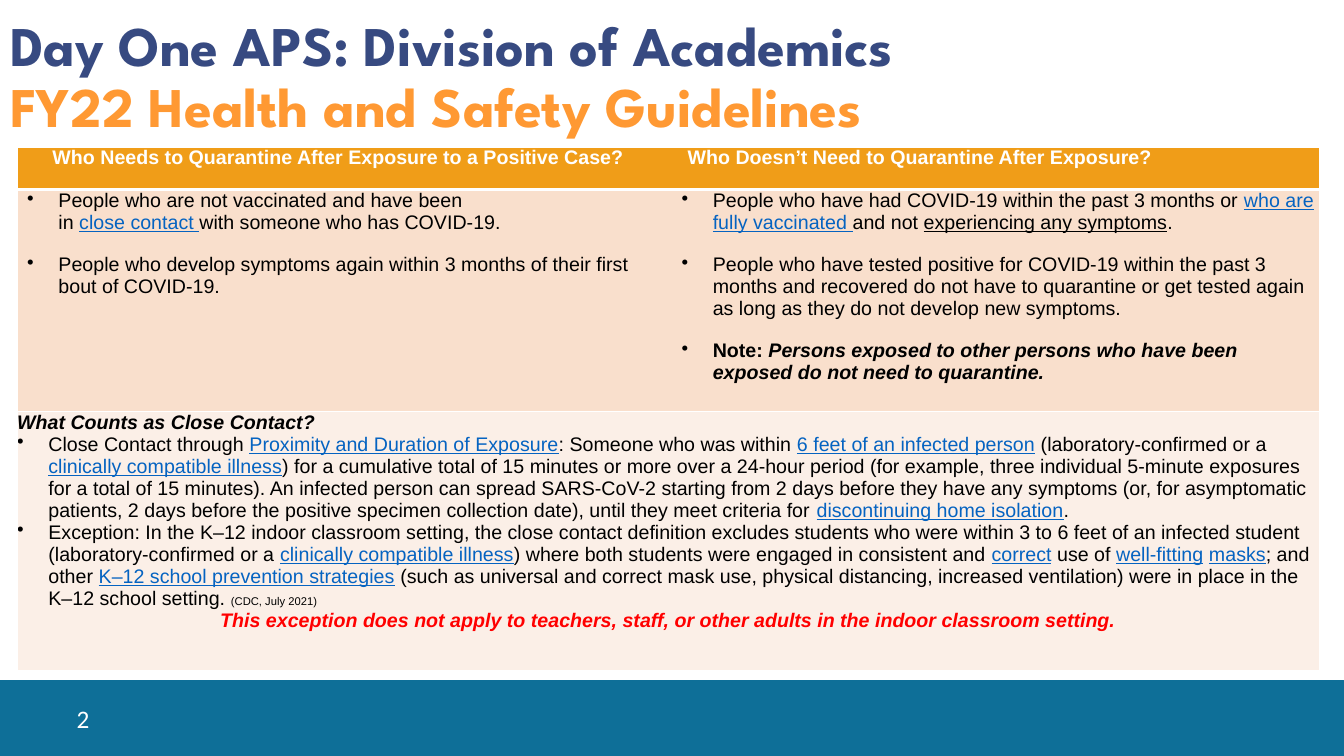
import dataclasses

import lxml.etree
import pptx
import pptx.dml.color
import pptx.enum.shapes
import pptx.enum.text
import pptx.oxml.ns
import pptx.util

WIDE, HIGH = 13.33, 7.5
ALIGN = pptx.enum.text.PP_ALIGN


@dataclasses.dataclass
class Theme:
    """Colours, fonts and type sizes of the slide."""
    navy: str = "374A81"
    gold: str = "FF9933"
    teal: str = "0E6F98"
    head: str = "F09D18"
    peach: str = "F9DFCC"
    pale: str = "FBEFE7"
    blue: str = "0563C1"
    red: str = "FF0000"
    black: str = "000000"
    white: str = "FFFFFF"
    title: str = "League Spartan"
    body: str = "Arial"
    digit: str = "Calibri"
    large: int = 40
    page: int = 18
    text: int = 14
    small: int = 8


LOOK = Theme()

STYLES = {
    "plain": {},
    "head": {"hue": LOOK.white, "bold": True},
    "link": {"hue": LOOK.blue, "under": True},
    "under": {"under": True},
    "bold": {"bold": True},
    "strong": {"bold": True, "slant": True},
    "alert": {"hue": LOOK.red, "bold": True, "slant": True},
    "small": {"size": LOOK.small},
}

NEEDS = [
    [("People who are not vaccinated and have been", "plain"), ("\n", "plain"),
     ("in ", "plain"), ("close contact ", "link"),
     ("with someone who has COVID-19.", "plain")],
    [("People who develop symptoms again within 3 months of their first bout of COVID-19.",
      "plain")],
]
EXEMPT = [
    [("People who have had COVID-19 within the past 3 months or ", "plain"),
     ("who are fully vaccinated ", "link"), ("and not ", "plain"),
     ("experiencing any symptoms", "under"), (".", "plain")],
    [("People who have tested positive for COVID-19 within the past 3 months and recovered "
      "do not have to quarantine or get tested again as long as they do not develop new "
      "symptoms.", "plain")],
    [("Note: ", "bold"),
     ("Persons exposed to other persons who have been exposed do not need to quarantine.",
      "strong")],
]
ASK = [("What Counts as Close Contact?", "strong")]
CLOSE = [
    [("Close Contact through ", "plain"), ("Proximity and Duration of Exposure", "link"),
     (": Someone who was within ", "plain"), ("6 feet of an infected person", "link"),
     (" (laboratory-confirmed or a ", "plain"), ("clinically compatible illness", "link"),
     (") for a cumulative total of 15 minutes or more over a 24-hour period (for example, "
      "three individual 5-minute exposures for a total of 15 minutes). An infected person "
      "can spread SARS-CoV-2 starting from 2 days before they have any symptoms (or, for "
      "asymptomatic patients, 2 days before the positive specimen collection date), until "
      "they meet criteria for ", "plain"),
     ("discontinuing home isolation", "link"), (".", "plain")],
    [("Exception: In the K–12 indoor classroom setting, the close contact definition "
      "excludes students who were within 3 to 6 feet of an infected student "
      "(laboratory-confirmed or a ", "plain"),
     ("clinically compatible illness", "link"),
     (") where both students were engaged in consistent and ", "plain"),
     ("correct", "link"), (" use of ", "plain"), ("well-fitting", "link"), (" ", "plain"),
     ("masks", "link"), ("; and other ", "plain"),
     ("K–12 school prevention strategies", "link"),
     (" (such as universal and correct mask use, physical distancing, increased "
      "ventilation) were in place in the K–12 school setting. ", "plain"),
     ("(CDC, July 2021)", "small")],
]
ALERT = [("This exception does not apply to teachers, staff, or other adults in the indoor "
          "classroom setting.", "alert")]


def color(code):
    """Turn a hex code into a colour."""
    return pptx.dml.color.RGBColor.from_string(code)


def inches(box):
    """Turn a box of numbers into lengths."""
    return [pptx.util.Inches(n) for n in box]


def format_run(run, hue=LOOK.black, bold=False, slant=False, under=False,
               size=LOOK.text, face=LOOK.body):
    """Set the type of one run."""
    font = run.font
    font.name, font.size, font.bold = face, pptx.util.Pt(size), bold
    font.italic, font.underline = slant, under
    font.color.rgb = color(hue)


def write(para, spans):
    """Fill a paragraph with styled spans."""
    for words, style in spans:
        if words == "\n":
            para.add_line_break()
            continue
        run = para.add_run()
        run.text = words
        format_run(run, **STYLES[style])


def bullet(para, left, hang=0.31):
    """Give a paragraph a hanging bullet."""
    props = para._p.get_or_add_pPr()
    props.set("marL", str(pptx.util.Inches(left)))
    props.set("indent", str(-pptx.util.Inches(hang)))
    mark = lxml.etree.SubElement(props, pptx.oxml.ns.qn("a:buChar"))
    mark.set("char", "•")


def fill_list(frame, items, left, gap):
    """Write bulleted items with even gaps."""
    for i, spans in enumerate(items):
        para = frame.paragraphs[0] if i == 0 else frame.add_paragraph()
        if i:
            para.space_before = pptx.util.Pt(gap)
        bullet(para, left)
        write(para, spans)


def border(cell, **edges):
    """Draw white cell edges of the given widths."""
    props = cell._tc.get_or_add_tcPr()
    for spot, side in enumerate(side for side in "LRTB" if side in edges):
        line = lxml.etree.Element(pptx.oxml.ns.qn(f"a:ln{side}"))
        line.set("w", str(pptx.util.Pt(edges[side])))
        solid = lxml.etree.SubElement(line, pptx.oxml.ns.qn("a:solidFill"))
        tint = lxml.etree.SubElement(solid, pptx.oxml.ns.qn("a:srgbClr"))
        tint.set("val", LOOK.white)
        props.insert(spot, line)


def paint(cell, hue, left=0):
    """Fill a cell and set its margins."""
    cell.fill.solid()
    cell.fill.fore_color.rgb = color(hue)
    cell.margin_left = pptx.util.Inches(left)
    cell.margin_right = cell.margin_top = cell.margin_bottom = 0


def text_box(slide, box, top=0):
    """Add a wrapping text box and return its frame."""
    frame = slide.shapes.add_textbox(*inches(box)).text_frame
    frame.word_wrap = True
    frame.margin_left = frame.margin_right = frame.margin_bottom = 0
    frame.margin_top = pptx.util.Inches(top)
    return frame


def add_title(slide, box):
    """Place the two-line title."""
    frame = text_box(slide, box, top=0.17)
    para = frame.paragraphs[0]
    para.text = "Day One APS: Division of Academics\vFY22 Health and Safety Guidelines"
    para.line_spacing = pptx.util.Pt(43.4)
    for run, hue in zip(para.runs, (LOOK.navy, LOOK.gold)):
        format_run(run, hue, bold=True, size=LOOK.large, face=LOOK.title)


def add_guide(slide, box):
    """Place the table of quarantine rules."""
    table = slide.shapes.add_table(3, 2, *inches(box)).table
    table._tbl.tblPr[0].text = "{2D5ABB26-0587-4C30-8999-92F81FD0307C}"
    table.first_row = table.horz_banding = False
    for col, wide in zip(table.columns, (6.44, 6.48)):
        col.width = pptx.util.Inches(wide)
    for row, high in zip(table.rows, (0.42, 2.2, 2.57)):
        row.height = pptx.util.Inches(high)

    columns = (("Who Needs to Quarantine After Exposure to a Positive Case?", 0.35,
                NEEDS, 0.41, "L"),
               ("Who Doesn’t Need to Quarantine After Exposure?", 0.21, EXEMPT, 0.46, "R"))
    for i, (label, left, items, indent, side) in enumerate(columns):
        top, cell = table.cell(0, i), table.cell(1, i)
        paint(top, LOOK.head, left)
        write(top.text_frame.paragraphs[0], [(label, "head")])
        border(top, **{side: 1}, T=1, B=3)
        paint(cell, LOOK.peach)
        fill_list(cell.text_frame, items, indent, 14.4)
        border(cell, **{side: 1}, T=3, B=1)

    base = table.cell(2, 0)
    base.merge(table.cell(2, 1))
    paint(base, LOOK.pale)
    border(base, L=1, R=1, T=1, B=1)
    frame = base.text_frame
    write(frame.paragraphs[0], ASK)
    for spans in CLOSE:
        para = frame.add_paragraph()
        bullet(para, 0.31)
        write(para, spans)
    last = frame.add_paragraph()
    last.alignment = ALIGN.CENTER
    write(last, ALERT)


def add_foot(slide, box):
    """Place the footer band and page number."""
    x, y, wide, high = box
    kind = pptx.enum.shapes.MSO_SHAPE.RECTANGLE
    band = slide.shapes.add_shape(kind, *inches(box))
    band.shadow.inherit = False
    band.fill.solid()
    band.fill.fore_color.rgb = band.line.color.rgb = color(LOOK.teal)
    band.line.width = pptx.util.Pt(0.75)
    frame = text_box(slide, (x + 0.76, y + 0.28, 0.22, 0.28))
    para = frame.paragraphs[0]
    para.text = "2"
    para.line_spacing = pptx.util.Pt(18.1)
    format_run(para.runs[0], LOOK.white, size=LOOK.page, face=LOOK.digit)


def main():
    """Build and save the slide."""
    deck = pptx.Presentation()
    deck.slide_width, deck.slide_height = inches((WIDE, HIGH))
    slide = deck.slides.add_slide(deck.slide_layouts[6])
    add_foot(slide, (0, HIGH * 0.9, WIDE, HIGH * 0.1))
    add_title(slide, (0.1, 0, 13.15, 1.48))
    add_guide(slide, (0.17, 1.46, 12.92, 5.19))
    deck.save("out.pptx")


if __name__ == "__main__":
    main()
